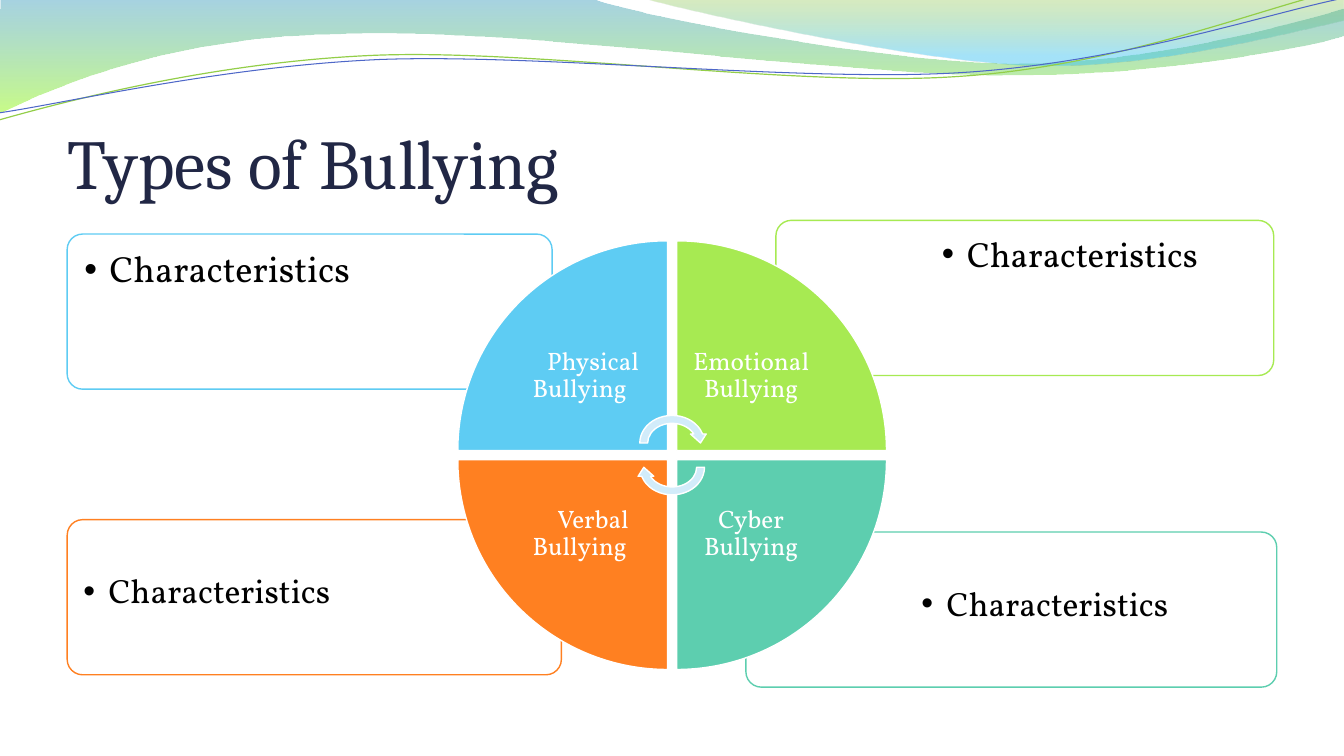
from lxml.etree import SubElement
from pptx import Presentation
from pptx.dml.color import RGBColor
from pptx.enum.shapes import MSO_SHAPE as Preset
from pptx.enum.text import MSO_ANCHOR as Anchor, MSO_AUTO_SIZE as AutoSize, PP_ALIGN as Align
from pptx.oxml.ns import qn
from pptx.util import Pt

COLORS = {
    "title": "212745", "text": "000000", "white": "FFFFFF", "arrow": "D2ECFA",
    "physical": "5ECCF3", "emotional": "A7EA52", "cyber": "5DCEAF", "verbal": "FF8021",
    "band_top": "3B9CBF", "band_bottom": "9CFA24",
    "crest_top": "7EBE2C", "crest_bottom": "39C1F1",
    "green_line": "93CE48", "blue_line": "4E67C8",
}
BODY_FONT = "Vollkorn"

BAND = [(0, 0), (422.6, -0.7), (456.5, 12.2, 636.5, 45.4, 727.9, 45.4),
        (818.6, 45.4, 919.4, 18.7, 959.8, 6.5), (960.5, 25.9),
        (943.9, 31.7, 834.5, 54.7, 715.7, 54), (596.9, 54, 366.5, 20.2, 247, 24.5),
        (123.1, 25.9, 43.9, 59.8, -1.4, 81.4)]
CREST = [(459.4, -0.7), (488.9, 7.9, 654.5, 44.6, 738, 46.8),
         (820.8, 49.7, 923, 23, 959.8, 15.1), (959.8, 0)]
GREEN_LINE = [(-0.7, 85.7), (45.4, 72.7, 151.2, 44.6, 265.7, 39.6),
              (379.4, 34.6, 568.1, 62.6, 683.3, 54.7),
              (799.2, 47.5, 900.7, 5.8, 957.6, -7.2)]
BLUE_LINE = [(-0.7, 80.6), (44.6, 74.2, 157, 47.5, 271.4, 42.5),
             (386.6, 38.2, 573.1, 59, 687.6, 51.8),
             (802.1, 44.6, 903.6, 10.1, 959.8, -1.4)]


def rgb(name):
    """Return the named colour."""
    return RGBColor.from_string(COLORS[name])


def set_opacity(color_element, percent):
    """Make a colour element partly transparent."""
    SubElement(color_element, qn("a:alpha")).set("val", str(percent * 1000))


def draw_outline(slide, segments, close):
    """Draw a freeform whose six-number segments are cubic curves."""
    start, *rest = [(Pt(x), Pt(y)) for segment in segments
                    for x, y in zip(segment[::2], segment[1::2])]
    builder = slide.shapes.build_freeform(*start, scale=1.0)
    builder.add_line_segments(rest, close=close)
    outline = builder.convert_to_shape()
    outline.shadow.inherit = False
    nodes = iter(list(outline._element.spPr.iter(qn("a:lnTo"))))
    for segment in segments[1:]:
        node = next(nodes)
        if len(segment) == 6:
            node.tag = qn("a:cubicBezTo")
            for _ in range(2):
                control = next(nodes)
                node.append(control[0])
                control.getparent().remove(control)
    return outline


def add_waves(slide):
    """Draw the shaded waves and thin lines along the top."""
    for segments, stops in (
            (BAND, ((0, "band_top", 45), (1, "band_bottom", 55))),
            (CREST, ((0, "crest_top", 30), (0.8, "crest_bottom", 45)))):
        wave = draw_outline(slide, segments, True)
        wave.line.fill.background()
        wave.fill.gradient()
        wave.fill.gradient_angle = 270
        for stop, (position, color, _) in zip(wave.fill.gradient_stops, stops):
            stop.position = position
            stop.color.rgb = rgb(color)
        for element, (_, _, opacity) in zip(wave._element.spPr.iter(qn("a:srgbClr")), stops):
            set_opacity(element, opacity)
    for segments, color, weight in ((GREEN_LINE, "green_line", 0.85),
                                    (BLUE_LINE, "blue_line", 0.75)):
        ripple = draw_outline(slide, segments, False)
        ripple.fill.background()
        ripple.line.color.rgb = rgb(color)
        ripple.line.width = Pt(weight)


def add_title(slide, box):
    """Place and format the title."""
    title = slide.shapes.title
    title.left, title.top, title.width, title.height = map(Pt, box)
    frame = title.text_frame
    frame.text = "Types of Bullying"
    frame.auto_size = AutoSize.NONE
    frame.vertical_anchor = Anchor.BOTTOM
    frame.margin_left = frame.margin_right = frame.margin_bottom = 0
    frame.margin_top = Pt(3.6)
    frame.paragraphs[0].alignment = Align.LEFT
    font = frame.paragraphs[0].runs[0].font
    font.name, font.size, font.color.rgb = "Cambria", Pt(50), rgb("title")


def add_preset(slide, preset, box, fill, line, rotation=0):
    """Draw a filled and outlined preset shape."""
    shape = slide.shapes.add_shape(preset, *map(Pt, box))
    shape.shadow.inherit = False
    shape.rotation = rotation
    shape.fill.solid()
    shape.fill.fore_color.rgb = rgb(fill)
    shape.line.color.rgb = rgb(line)
    shape.line.width = Pt(1)
    return shape


def add_text(slide, box, wording, size, color, margin, bullet=False):
    """Place a bulleted or centred text in a box."""
    frame = slide.shapes.add_textbox(*map(Pt, box)).text_frame
    frame.word_wrap = True
    frame.margin_left = frame.margin_right = Pt(margin)
    frame.margin_top = frame.margin_bottom = Pt(margin)
    frame.text = wording
    paragraph = frame.paragraphs[0]
    paragraph.line_spacing = 0.9
    properties = paragraph._p.get_or_add_pPr()
    if bullet:
        paragraph.level = 1
        properties.set("marL", str(Pt(18)))
        properties.set("indent", str(Pt(-18)))
        SubElement(properties, qn("a:buFont")).set("typeface", "Arial")
        SubElement(properties, qn("a:buChar")).set("char", "•")
    else:
        properties.set("defTabSz", str(Pt(63)))
        paragraph.alignment = Align.CENTER
        frame.vertical_anchor = Anchor.MIDDLE
    font = paragraph.runs[0].font
    font.name, font.size, font.color.rgb = BODY_FONT, Pt(size), rgb(color)


def add_characteristics(slide, box, color, size, on_right, on_bottom):
    """Draw one corner panel with its text away from the circle."""
    panel = add_preset(slide, Preset.ROUNDED_RECTANGLE, box, "white", color)
    panel.adjustments[0] = 0.1
    set_opacity(panel._element.spPr.find(qn("a:solidFill"))[0], 90)
    left, top, width, height = box
    inset = 2.45
    text_box = (left + 0.3 * width * on_right + inset, top + 0.25 * height * on_bottom + inset,
                0.7 * width - 2 * inset, 0.75 * height - 2 * inset)
    add_text(slide, text_box, "Characteristics", size, "text", 0.38 * size, bullet=True)


def add_wheel(slide, box):
    """Draw the four wedges, their labels and the turning arrows."""
    left, top, width, height = box
    wedge = 149.8
    label = wedge * 0.71
    wedges = (("Physical Bullying\t", "physical", 0, 0), ("Emotional Bullying", "emotional", 1, 0),
              ("Cyber Bullying", "cyber", 1, 1), ("Verbal Bullying\t", "verbal", 0, 1))
    for turn, (kind, color, column, row) in enumerate(wedges):
        x = left + column * (width - wedge)
        y = top + row * (height - wedge)
        add_preset(slide, Preset.PIE_WEDGE, (x, y, wedge, wedge), color, "white", 90 * turn)
        label_box = (x + (1 - column) * (wedge - label), y + (1 - row) * (wedge - label),
                     label, label)
        add_text(slide, label_box, kind, 18, "white", 10.08)
    arrow_width, arrow_height = 51.8, 45
    for rotation, offset in ((0, -8.65), (180, 8.65)):
        arrow_box = (left + (width - arrow_width) / 2,
                     top + (height - arrow_height) / 2 + offset, arrow_width, arrow_height)
        add_preset(slide, Preset.CIRCULAR_ARROW, arrow_box, "arrow", "white", rotation)


def main():
    """Build and save the slide."""
    deck = Presentation()
    deck.slide_width, deck.slide_height = Pt(960), Pt(540)
    slide = deck.slides.add_slide(deck.slide_layouts[5])
    add_waves(slide)
    add_title(slide, (48, 55.4, 864, 90))
    add_characteristics(slide, (532.8, 380, 379.2, 110.8), "cyber", 24, True, True)
    add_characteristics(slide, (48, 371.2, 353, 110.8), "verbal", 24, False, True)
    add_characteristics(slide, (554.2, 157.4, 355.6, 110.8), "emotional", 25, True, False)
    add_characteristics(slide, (48, 167.2, 346.4, 110.8), "physical", 26, False, False)
    add_wheel(slide, (327, 172, 306.2, 306.2))
    deck.save("out.pptx")


if __name__ == "__main__":
    main()
